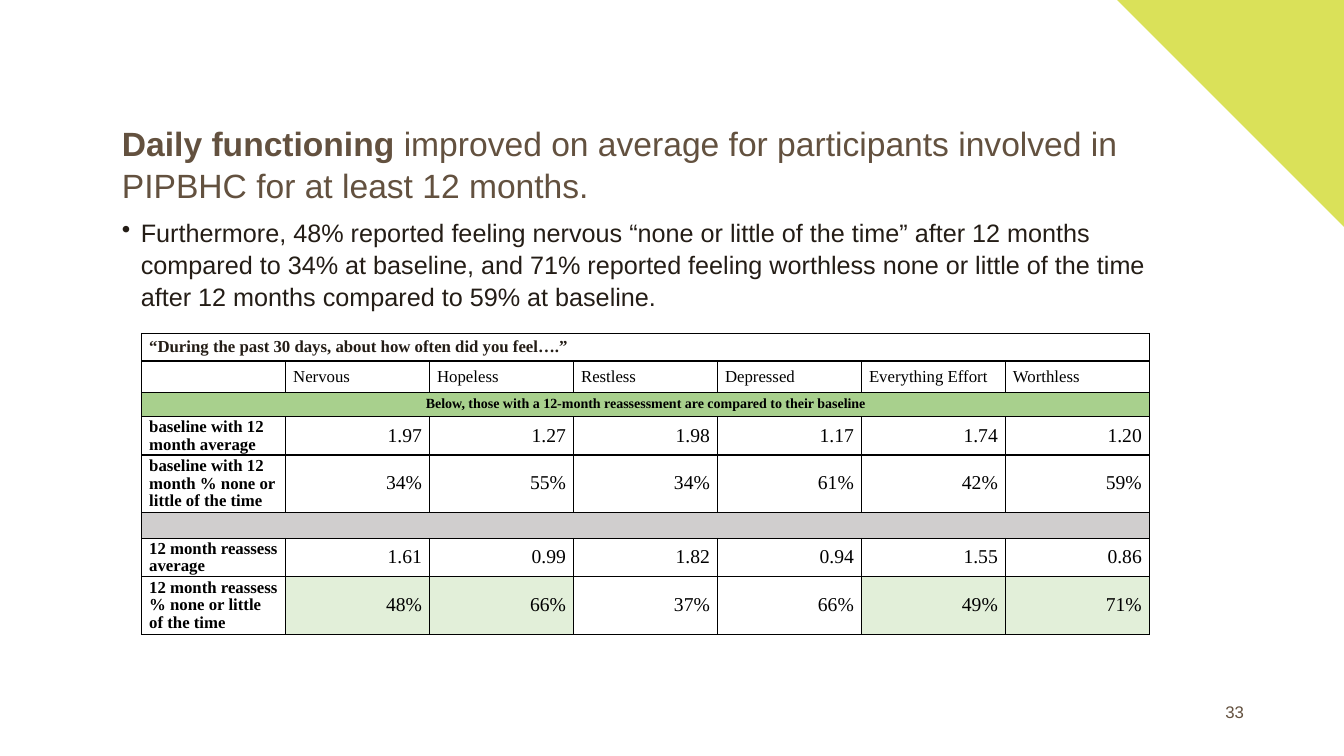
import pptx
import pptx.dml.color
import pptx.enum.shapes
import pptx.enum.text
import pptx.oxml
import pptx.oxml.ns
import pptx.util
from pptx.util import Cm

COLORS = {
    "lime": "DAE159", "brown": "63513F", "ink": "241D16", "black": "000000",
    "band": "A8D08D", "gap": "D0CECE", "improved": "E2EFD9",
}
ALIGN = pptx.enum.text.PP_ALIGN
MIDDLE = pptx.enum.text.MSO_ANCHOR.MIDDLE

QUESTION = "“During the past 30 days, about how often did you feel….”"
FEELINGS = ["Nervous", "Hopeless", "Restless", "Depressed", "Everything Effort", "Worthless"]
COMPARISON = "Below, those with a 12-month reassessment are compared to their baseline"
FINDING = (
    "Furthermore, 48% reported feeling nervous “none or little of the time” after 12 months "
    "compared to 34% at baseline, and 71% reported feeling worthless none or little of the time "
    "after 12 months compared to 59% at baseline."
)
# Row kind, height in cm, cell texts
SURVEY = [
    ("question", 0.7, [QUESTION]),
    ("feelings", 0.79, [""] + FEELINGS),
    ("band", 0.61, [COMPARISON]),
    ("scores", 0.93, ["baseline with 12 month average",
                      "1.97", "1.27", "1.98", "1.17", "1.74", "1.20"]),
    ("scores", 1.41, ["baseline with 12 month % none or little of the time",
                      "34%", "55%", "34%", "61%", "42%", "59%"]),
    ("gap", 0.65, [""]),
    ("scores", 0.93, ["12 month reassess average",
                      "1.61", "0.99", "1.82", "0.94", "1.55", "0.86"]),
    ("scores", 1.41, ["12 month reassess % none or little of the time",
                      "48%", "66%", "37%", "66%", "49%", "71%"]),
]
IMPROVED_COLUMNS = (1, 2, 5, 6)


def rgb(name):
    return pptx.dml.color.RGBColor.from_string(COLORS[name])


class SlideBuilder:
    text_font = "Arial"
    table_font = "Times New Roman"

    def __init__(self, deck):
        self.slide = deck.slides.add_slide(deck.slide_layouts[5])

    def style(self, paragraph, size, color, font=None, bold=False, align=ALIGN.LEFT):
        paragraph.alignment = align
        paragraph.font.name = font or self.text_font
        paragraph.font.size = pptx.util.Pt(size)
        paragraph.font.bold = bold
        paragraph.font.color.rgb = rgb(color)

    def corner(self, size, slide_width):
        triangle = self.slide.shapes.add_shape(
            pptx.enum.shapes.MSO_SHAPE.RIGHT_TRIANGLE, slide_width - size, 0, size, size)
        triangle.rotation = 180
        triangle.shadow.inherit = False
        triangle.fill.solid()
        triangle.fill.fore_color.rgb = rgb("lime")
        triangle.line.fill.background()

    def title(self, emphasis, rest, left, top, width, height):
        heading = self.slide.shapes.title
        heading.left, heading.top, heading.width, heading.height = left, top, width, height
        frame = heading.text_frame
        frame.word_wrap = True
        frame.auto_size = pptx.enum.text.MSO_AUTO_SIZE.NONE
        frame.vertical_anchor = MIDDLE
        frame.margin_bottom = Cm(0.63)
        paragraph = frame.paragraphs[0]
        paragraph.line_spacing = 1.04
        self.style(paragraph, 24, "brown")
        strong = paragraph.add_run()
        strong.text = emphasis
        strong.font.bold = True
        paragraph.add_run().text = rest

    def text(self, words, left, top, width, height):
        """Add a wrapping text box and return its frame."""
        frame = self.slide.shapes.add_textbox(left, top, width, height).text_frame
        frame.word_wrap = True
        frame.text = words
        return frame

    def bullet(self, words, *box):
        paragraph = self.text(words, *box).paragraphs[0]
        paragraph.line_spacing = 1.06
        properties = paragraph._p.get_or_add_pPr()
        properties.set("marL", str(Cm(0.48)))
        properties.set("indent", str(-Cm(0.48)))
        properties.append(pptx.oxml.parse_xml(
            f'<a:buChar {pptx.oxml.ns.nsdecls("a")} char="•"/>'))
        self.style(paragraph, 18, "ink")

    def page_number(self, number, *box):
        frame = self.text(number, *box)
        frame.vertical_anchor = MIDDLE
        self.style(frame.paragraphs[0], 12, "brown", align=ALIGN.RIGHT)

    def border(self, cell):
        properties = cell._tc.get_or_add_tcPr()
        for side in "LRTB":
            properties.append(pptx.oxml.parse_xml(
                f'<a:ln{side} {pptx.oxml.ns.nsdecls("a")} w="12700"><a:solidFill>'
                f'<a:srgbClr val="{COLORS["black"]}"/></a:solidFill></a:ln{side}>'))

    def cell(self, cell, words, fill=None, size=12, color="black", bold=False, align=ALIGN.LEFT):
        self.border(cell)
        cell.margin_left = cell.margin_right = Cm(0.19)
        cell.margin_top = cell.margin_bottom = 0
        cell.vertical_anchor = MIDDLE
        if fill:
            cell.fill.solid()
            cell.fill.fore_color.rgb = rgb(fill)
        else:
            cell.fill.background()
        cell.text = words
        paragraph = cell.text_frame.paragraphs[0]
        paragraph.line_spacing = 0.95
        self.style(paragraph, size, color, self.table_font, bold, align)

    def survey_table(self, rows, left, top, width):
        columns = len(FEELINGS) + 1
        height = Cm(sum(row_height for _, row_height, _ in rows))
        table = self.slide.shapes.add_table(len(rows), columns, left, top, width, height).table
        table.first_row = table.horz_banding = False
        formats = {
            "question": dict(color="ink", bold=True),
            "feelings": dict(),
            "band": dict(fill="band", size=10, bold=True, align=ALIGN.CENTER),
            "gap": dict(fill="gap"),
            "scores": dict(size=14, align=ALIGN.RIGHT),
        }
        for r, (kind, row_height, words) in enumerate(rows):
            table.rows[r].height = Cm(row_height)
            if len(words) == 1:
                table.cell(r, 0).merge(table.cell(r, columns - 1))
            for c in range(columns):
                look = dict(formats[kind])
                if kind == "scores" and c == 0:
                    look = dict(bold=True)
                elif r == len(rows) - 1 and c in IMPROVED_COLUMNS:
                    look["fill"] = "improved"
                self.cell(table.cell(r, c), words[c] if c < len(words) else "", **look)


def main():
    deck = pptx.Presentation()
    deck.slide_width, deck.slide_height = Cm(33.87), Cm(19.05)
    builder = SlideBuilder(deck)
    builder.corner(Cm(5.72), deck.slide_width)
    builder.title("Daily functioning",
                  " improved on average for participants involved in PIPBHC for at least 12 months.",
                  Cm(2.82), Cm(3.28), Cm(27.94), Cm(2.16))
    builder.page_number("33", Cm(23.98), Cm(17.65), Cm(7.62), Cm(0.58))
    builder.bullet(FINDING, Cm(2.82), Cm(5.31), Cm(27.51), Cm(10.92))
    builder.survey_table(SURVEY, Cm(3.57), Cm(8.4), Cm(25.4))
    deck.save("out.pptx")


if __name__ == "__main__":
    main()
